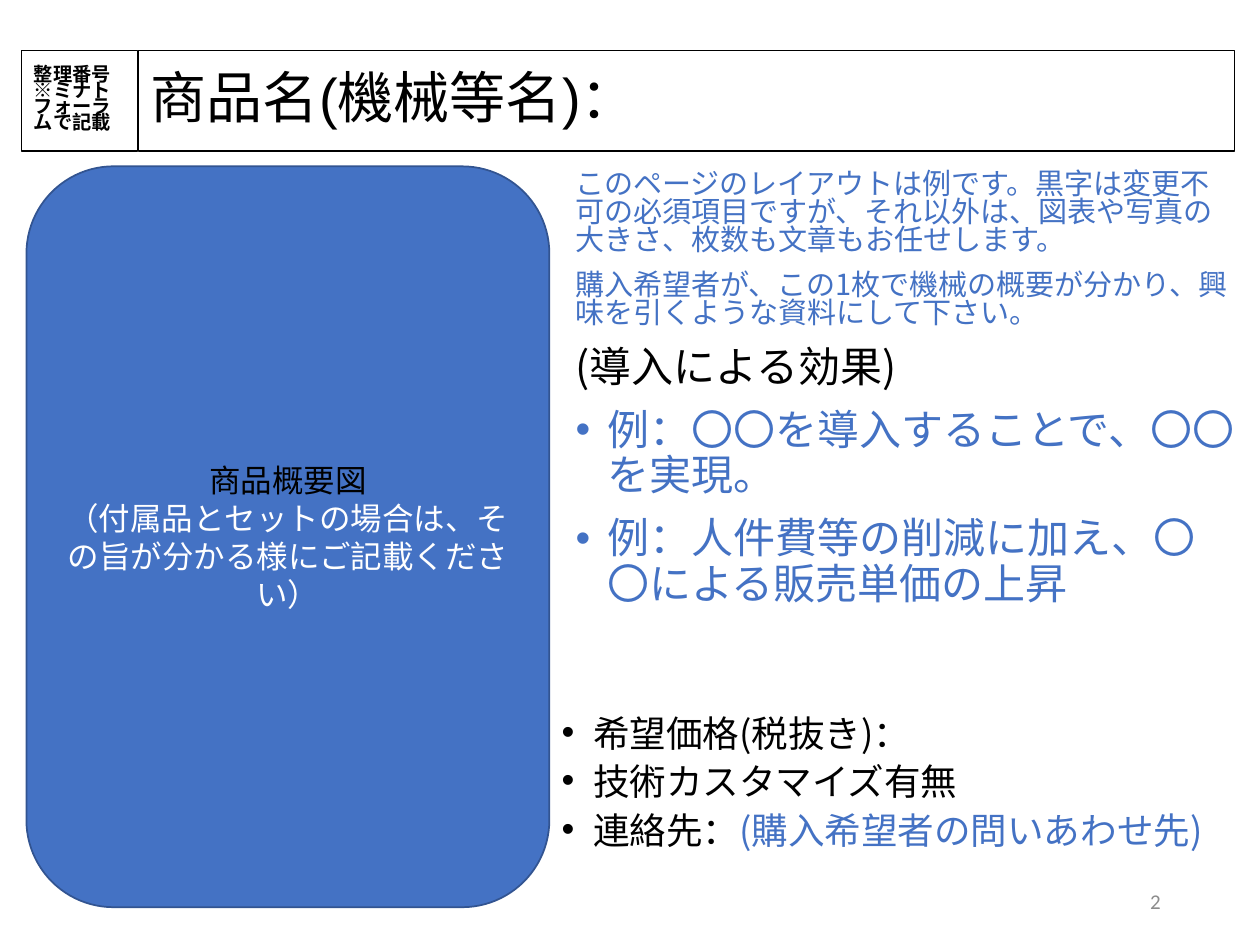
from pptx import Presentation
from pptx.dml.color import RGBColor
from pptx.enum.shapes import MSO_SHAPE
from pptx.enum.text import MSO_ANCHOR, PP_ALIGN
from pptx.oxml.ns import qn
from pptx.util import Inches, Pt
from lxml import etree

RECT, ROUNDED = MSO_SHAPE.RECTANGLE, MSO_SHAPE.ROUNDED_RECTANGLE
TOP, MIDDLE = MSO_ANCHOR.TOP, MSO_ANCHOR.MIDDLE
LEFT, CENTER, RIGHT = PP_ALIGN.LEFT, PP_ALIGN.CENTER, PP_ALIGN.RIGHT
COLORS = {"black": "000000", "white": "FFFFFF", "blue": "4472C4",
          "edge": "325491", "grey": "8C8C8C"}
CJK, LATIN, TITLE = "Noto Sans CJK JP", "Calibri", "Arial"


def color(name):
    return RGBColor.from_string(COLORS[name])


def add_panel(page, box, kind, line, width, fill=None):
    panel = page.shapes.add_shape(kind, *map(Inches, box))
    panel.shadow.inherit = False
    if fill:
        panel.fill.solid()
        panel.fill.fore_color.rgb = color(fill)
    else:
        panel.fill.background()
    panel.line.color.rgb = color(line)
    panel.line.width = Pt(width)
    return panel.text_frame


def add_text_box(page, box):
    return page.shapes.add_textbox(*map(Inches, box)).text_frame


def add_bullet(para):
    props = para._p.get_or_add_pPr()
    props.set("marL", str(Inches(0.25)))
    props.set("indent", str(-Inches(0.25)))
    etree.SubElement(props, qn("a:buFont")).set("typeface", "Arial")
    etree.SubElement(props, qn("a:buChar")).set("char", "•")


def write(frame, lines, size, anchor=TOP, align=LEFT, spacing=1.0, before=0, bold=False):
    """Fill a frame with lines of (spans, font, bulleted); a span is (text, colour)."""
    frame.word_wrap = True
    frame.vertical_anchor = anchor
    for index, (spans, font, bulleted) in enumerate(lines):
        para = frame.add_paragraph() if index else frame.paragraphs[0]
        para.alignment = align
        para.line_spacing = spacing
        para.space_before = Pt(before if index else 0)
        if bulleted:
            add_bullet(para)
        para.font.name, para.font.size, para.font.bold = font, Pt(size), bold
        para.font.color.rgb = color(spans[0][1])
        for text, tone in spans:
            span = para.add_run()
            span.text = text
            if tone != spans[0][1]:
                span.font.color.rgb = color(tone)


def add_header(page, left, top, width, height):
    number_width, gap = 0.92, 0.01
    title_left = left + number_width + gap
    title = add_panel(page, (title_left, top, left + width - title_left, height),
                      RECT, "black", 0.75)
    write(title, [([("商品名(機械等名)：", "black")], TITLE, False)], 32, MIDDLE, spacing=0.9)
    number = add_panel(page, (left, top, number_width, height), RECT, "black", 0.75)
    write(number, [([(text, "black")], CJK, False)
                   for text in ("整理番号", "※ミナトフォーラムで記載")],
          11, MIDDLE, spacing=0.7, bold=True)


def add_overview(page, box):
    frame = add_panel(page, box, ROUNDED, "edge", 1, "blue")
    write(frame, [
        ([("商品概要図", "black")], LATIN, False),
        ([("（付属品とセットの場合は、その旨が分かる様にご記載ください）", "white")], LATIN, False),
    ], 18, MIDDLE, CENTER)


def add_guidance(page, box):
    notes = (
        "このページのレイアウトは例です。黒字は変更不可の必須項目ですが、"
        "それ以外は、図表や写真の大きさ、枚数も文章もお任せします。",
        "購入希望者が、この1枚で機械の概要が分かり、興味を引くような資料にして下さい。",
    )
    write(add_text_box(page, box), [([(note, "blue")], CJK, False) for note in notes],
          16.6, spacing=0.8, before=10)


def add_effects(page, box):
    write(add_text_box(page, box), [
        ([("(導入による効果)", "black")], CJK, False),
        ([("例：〇〇を導入することで、〇〇を実現。", "blue")], LATIN, True),
        ([("例：人件費等の削減に加え、〇〇による販売単価の上昇", "blue")], LATIN, True),
    ], 24, spacing=0.9, before=10)


def add_terms(page, box):
    frame = add_text_box(page, box)
    frame.margin_top = Inches(0.38)
    write(frame, [
        ([("希望価格(税抜き)：", "black")], CJK, True),
        ([("技術カスタマイズ有無", "black")], CJK, True),
        ([("連絡先：", "black"), ("(購入希望者の問いあわせ先)", "blue")], CJK, True),
    ], 20.9, spacing=0.7, before=10)


def add_page_number(page, box):
    write(add_text_box(page, box), [([("2", "grey")], LATIN, False)], 12, MIDDLE, RIGHT)


def main():
    deck = Presentation()
    deck.slide_width, deck.slide_height = Inches(10), Inches(7.5)
    page = deck.slides.add_slide(deck.slide_layouts[6])
    add_header(page, 0.17, 0.4, 9.63, 0.8)
    add_overview(page, (0.21, 1.32, 4.15, 5.88))
    add_guidance(page, (4.47, 1.32, 5.44, 1.37))
    add_effects(page, (4.47, 2.7, 5.44, 2.66))
    add_terms(page, (4.36, 5.36, 5.55, 1.68))
    add_page_number(page, (7.06, 6.95, 2.25, 0.4))
    deck.save("out.pptx")


if __name__ == "__main__":
    main()
